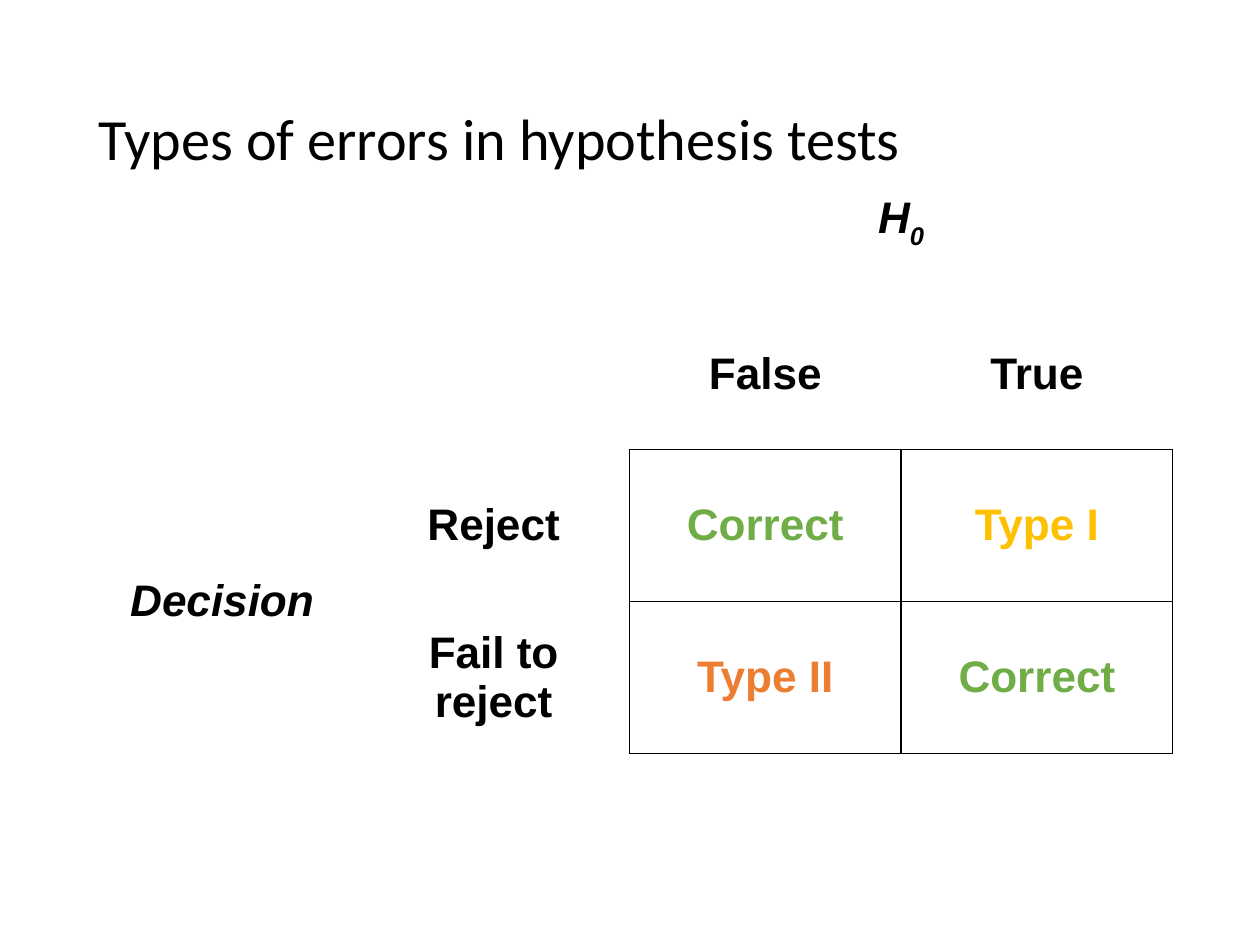
from pptx import Presentation
from pptx.dml.color import RGBColor
from pptx.enum.text import MSO_ANCHOR, MSO_AUTO_SIZE, PP_ALIGN
from pptx.oxml import parse_xml
from pptx.oxml.ns import nsdecls
from pptx.util import Inches, Pt

BLACK = RGBColor(0x00, 0x00, 0x00)
GREEN = RGBColor(0x70, 0xAD, 0x47)
GOLD = RGBColor(0xFF, 0xC0, 0x00)
ORANGE = RGBColor(0xED, 0x7D, 0x31)
NO_STYLE_NO_GRID = "{2D5ABB26-0587-4C30-8999-92F81FD0307C}"
SIZE = 4
LABELS = {
    (0, 2): ("H", BLACK, True),
    (1, 2): ("False", BLACK, False),
    (1, 3): ("True", BLACK, False),
    (2, 0): ("Decision", BLACK, True),
    (2, 1): ("Reject", BLACK, False),
    (2, 2): ("Correct", GREEN, False),
    (2, 3): ("Type I", GOLD, False),
    (3, 1): ("Fail to reject", BLACK, False),
    (3, 2): ("Type II", ORANGE, False),
    (3, 3): ("Correct", GREEN, False),
}


def add_run(p, text, size, name, color, bold=False, italic=False):
    r = p.add_run()
    r.text = text
    r.font.size = Pt(size)
    r.font.name = name
    r.font.color.rgb = color
    r.font.bold = bold
    r.font.italic = italic
    return r


def set_title(s, text):
    sp = s.shapes.title
    sp.left, sp.top = Inches(0.76), Inches(0.44)
    sp.width, sp.height = Inches(9.58), Inches(1.61)
    tf = sp.text_frame
    tf.word_wrap = True
    tf.auto_size = MSO_AUTO_SIZE.NONE
    tf.vertical_anchor = MSO_ANCHOR.MIDDLE
    tf.margin_left = tf.margin_right = Inches(0.11)
    tf.margin_top = tf.margin_bottom = Inches(0.11)
    p = tf.paragraphs[0]
    p.alignment = PP_ALIGN.LEFT
    p.line_spacing = 0.9
    add_run(p, text, 37, "Calibri", BLACK)


def add_borders(cell, row, col):
    sides = {
        "L": row >= 2 and col == 2,
        "R": row >= 2 and col in (1, 3),
        "T": row == 2 and col >= 2,
        "B": row in (1, 3) and col >= 2,
    }
    tcPr = cell._tc.get_or_add_tcPr()
    for side, shown in sides.items():
        if shown:
            tcPr.append(parse_xml(
                f'<a:ln{side} {nsdecls("a")} w="{Pt(1)}"><a:solidFill>'
                f'<a:srgbClr val="{BLACK}"/></a:solidFill></a:ln{side}>'))


def fill_cell(cell, text, color, italic):
    cell.vertical_anchor = MSO_ANCHOR.MIDDLE
    p = cell.text_frame.paragraphs[0]
    p.alignment = PP_ALIGN.CENTER
    add_run(p, text, 28, "Arial", color, True, italic)
    return p


def add_error_table(s):
    frame = s.shapes.add_table(SIZE, SIZE, Inches(0.76), Inches(1.29),
                               Inches(9.58), Inches(5.35))
    table = frame.table
    table.first_row = table.horz_banding = False
    table._tbl.tblPr.find("{*}tableStyleId").text = NO_STYLE_NO_GRID
    table.cell(0, 2).merge(table.cell(0, 3))
    table.cell(2, 0).merge(table.cell(3, 0))
    for row in range(SIZE):
        for col in range(SIZE):
            cell = table.cell(row, col)
            add_borders(cell, row, col)
            cell.fill.background()
            if (row, col) in LABELS:
                p = fill_cell(cell, *LABELS[row, col])
                if (row, col) == (0, 2):
                    r = add_run(p, "0", 28, "Arial", BLACK, True, True)
                    r._r.get_or_add_rPr().set("baseline", "-25000")


def main():
    prs = Presentation()
    prs.slide_width, prs.slide_height = Inches(11.11), Inches(8.33)
    s = prs.slides.add_slide(prs.slide_layouts[5])
    set_title(s, "Types of errors in hypothesis tests")
    add_error_table(s)
    prs.save("out.pptx")


if __name__ == "__main__":
    main()
